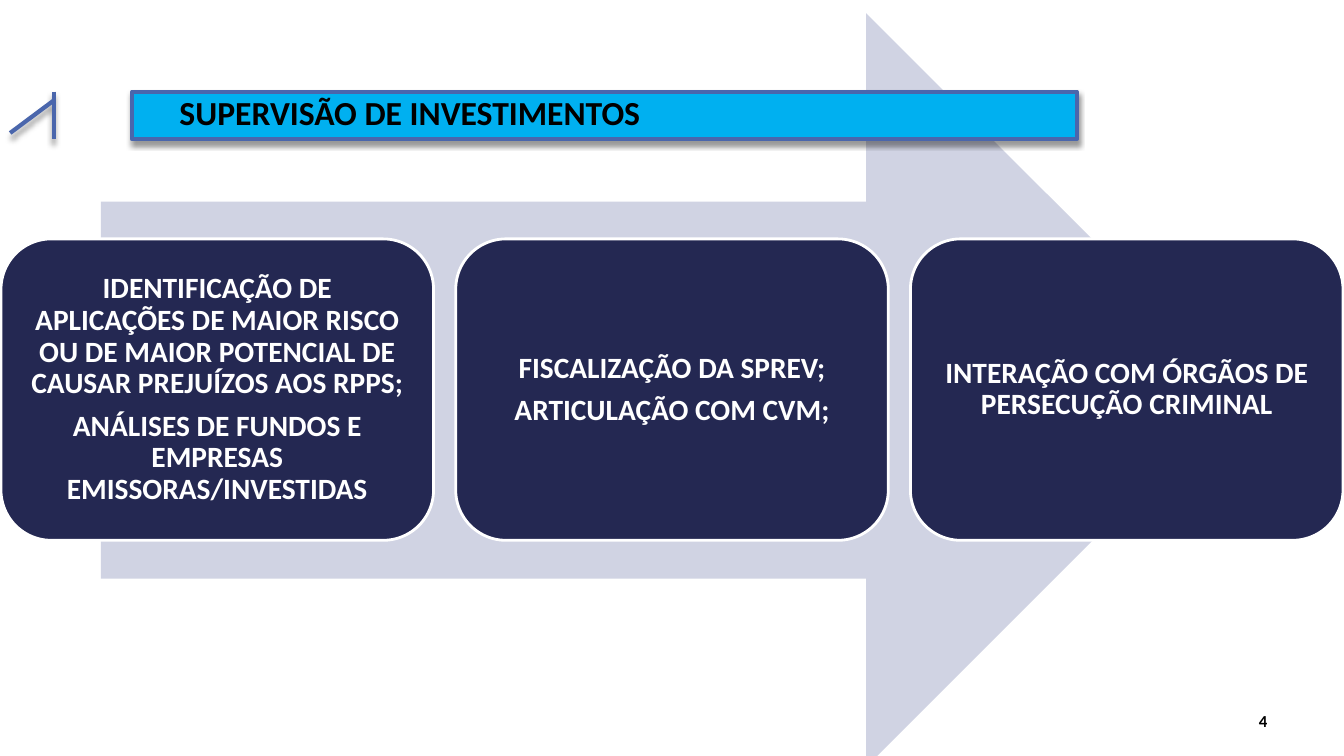
from dataclasses import dataclass

from lxml import etree
from pptx import Presentation
from pptx.dml.color import RGBColor
from pptx.enum.shapes import MSO_SHAPE
from pptx.enum.text import MSO_ANCHOR, MSO_AUTO_SIZE, PP_ALIGN
from pptx.oxml.ns import qn
from pptx.shapes.autoshape import Shape
from pptx.slide import Slide
from pptx.util import Inches, Pt

RIGHT_ARROW = MSO_SHAPE.RIGHT_ARROW
ROUNDED_RECTANGLE = MSO_SHAPE.ROUNDED_RECTANGLE
ACCENT_CALLOUT = MSO_SHAPE.LINE_CALLOUT_1_BORDER_AND_ACCENT_BAR
TOP, MIDDLE = MSO_ANCHOR.TOP, MSO_ANCHOR.MIDDLE
LEFT, CENTER, RIGHT = PP_ALIGN.LEFT, PP_ALIGN.CENTER, PP_ALIGN.RIGHT
NO_AUTO_SIZE = MSO_AUTO_SIZE.NONE

BLACK = RGBColor(0x00, 0x00, 0x00)
WHITE = RGBColor(0xFF, 0xFF, 0xFF)
NAVY = RGBColor(0x24, 0x28, 0x52)
PALE_BLUE = RGBColor(0xD0, 0xD3, 0xE3)
SKY_BLUE = RGBColor(0x00, 0xB0, 0xF0)
BORDER_BLUE = RGBColor(0x4A, 0x66, 0xAC)

FONT_NAME = "Calibri"
CARD_LEFT = 0.01
CARD_STEP = 4.51


@dataclass(frozen=True)
class Box:
    left: float
    top: float
    width: float
    height: float


@dataclass(frozen=True)
class Card:
    paragraphs: tuple[str, ...]


BANNER = Box(1.31, 0.91, 9.37, 0.47)
ARROW = Box(1, 0.13, 11.33, 7.48)
PAGE_NUMBER = Box(9.56, 6.95, 3.11, 0.4)

CARDS = (
    Card((
        "IDENTIFICAÇÃO DE APLICAÇÕES DE MAIOR RISCO OU DE MAIOR POTENCIAL DE "
        "CAUSAR PREJUÍZOS AOS RPPS;",
        "ANÁLISES DE FUNDOS E EMPRESAS EMISSORAS/INVESTIDAS",
    )),
    Card(("FISCALIZAÇÃO DA SPREV;", "ARTICULAÇÃO COM CVM;")),
    Card(("INTERAÇÃO COM ÓRGÃOS DE PERSECUÇÃO CRIMINAL",)),
)


def place(shape: Shape, box: Box) -> None:
    shape.left, shape.top = Inches(box.left), Inches(box.top)
    shape.width, shape.height = Inches(box.width), Inches(box.height)


def write_text(
    shape: Shape,
    *paragraphs: str,
    size: float,
    color: RGBColor,
    align: PP_ALIGN,
    anchor: MSO_ANCHOR = MIDDLE,
    inset: float = 0.0,
    left_inset: float | None = None,
    line_spacing: float = 1.0,
    gap: float = 0.0,
) -> None:
    frame = shape.text_frame
    frame.word_wrap = True
    frame.auto_size = NO_AUTO_SIZE
    frame.vertical_anchor = anchor
    frame.margin_left = Inches(inset if left_inset is None else left_inset)
    frame.margin_top = frame.margin_right = frame.margin_bottom = Inches(inset)
    for index, text in enumerate(paragraphs):
        paragraph = frame.add_paragraph() if index else frame.paragraphs[0]
        paragraph.alignment = align
        paragraph.line_spacing = line_spacing
        paragraph.space_before = Pt(gap if index else 0)
        run = paragraph.add_run()
        run.text = text
        run.font.name = FONT_NAME
        run.font.size = Pt(size)
        run.font.bold = True
        run.font.color.rgb = color


def add_filled_shape(
    slide: Slide,
    kind: MSO_SHAPE,
    box: Box,
    fill: RGBColor,
    line: RGBColor | None = None,
    line_width: float = 0.0,
) -> Shape:
    shape = slide.shapes.add_shape(kind, 0, 0, 0, 0)
    place(shape, box)
    shape.shadow.inherit = False
    shape.fill.solid()
    shape.fill.fore_color.rgb = fill
    if line is None:
        shape.line.fill.background()
    else:
        shape.line.color.rgb = line
        shape.line.width = Pt(line_width)
    return shape


def add_drop_shadow(shape: Shape) -> None:
    effects = shape.element.spPr.find(qn("a:effectLst"))
    shadow = etree.SubElement(
        effects, qn("a:outerShdw"),
        blurRad=str(Pt(4)), dist=str(Pt(3)), dir="5400000", rotWithShape="0",
    )
    color = etree.SubElement(shadow, qn("a:srgbClr"), val=str(BLACK))
    etree.SubElement(color, qn("a:alpha"), val="40000")


def add_banner(slide: Slide) -> None:
    banner = add_filled_shape(slide, ACCENT_CALLOUT, BANNER, SKY_BLUE, BORDER_BLUE, 3)
    for index, value in enumerate((0.188, -0.083, 0.872, -0.129)):
        banner.adjustments[index] = value
    add_drop_shadow(banner)

    title = slide.shapes.title
    place(title, BANNER)
    title.element.getparent().append(title.element)
    write_text(
        title, "SUPERVISÃO DE INVESTIMENTOS",
        size=24, color=BLACK, align=LEFT, anchor=TOP, left_inset=0.47,
    )


def add_cards(slide: Slide) -> None:
    for index, card in enumerate(CARDS):
        box = Box(CARD_LEFT + index * CARD_STEP, 2.37, 4.29, 2.99)
        shape = add_filled_shape(slide, ROUNDED_RECTANGLE, box, NAVY, WHITE, 2)
        write_text(
            shape, *card.paragraphs, size=21, color=WHITE, align=CENTER,
            inset=0.09, line_spacing=0.9, gap=7.35,
        )


def add_page_number(slide: Slide) -> None:
    number = slide.shapes.add_textbox(0, 0, 0, 0)
    place(number, PAGE_NUMBER)
    write_text(number, "4", size=12, color=BLACK, align=RIGHT, inset=0.1)


def main() -> None:
    presentation = Presentation()
    presentation.slide_width = Inches(13.33)
    presentation.slide_height = Inches(7.5)
    slide = presentation.slides.add_slide(presentation.slide_layouts[5])
    add_page_number(slide)
    add_filled_shape(slide, RIGHT_ARROW, ARROW, PALE_BLUE)
    add_cards(slide)
    add_banner(slide)
    presentation.save("out.pptx")


if __name__ == "__main__":
    main()
